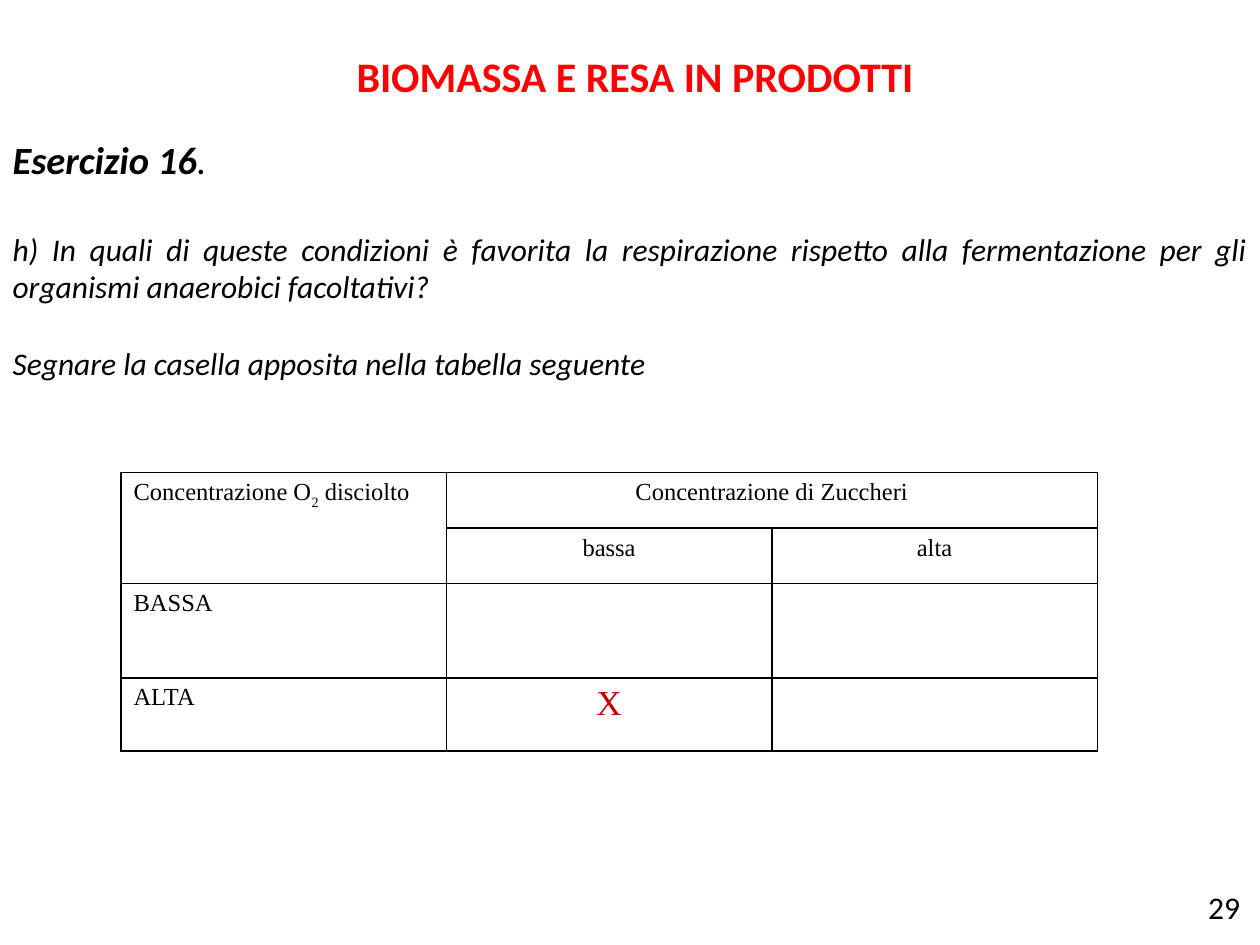
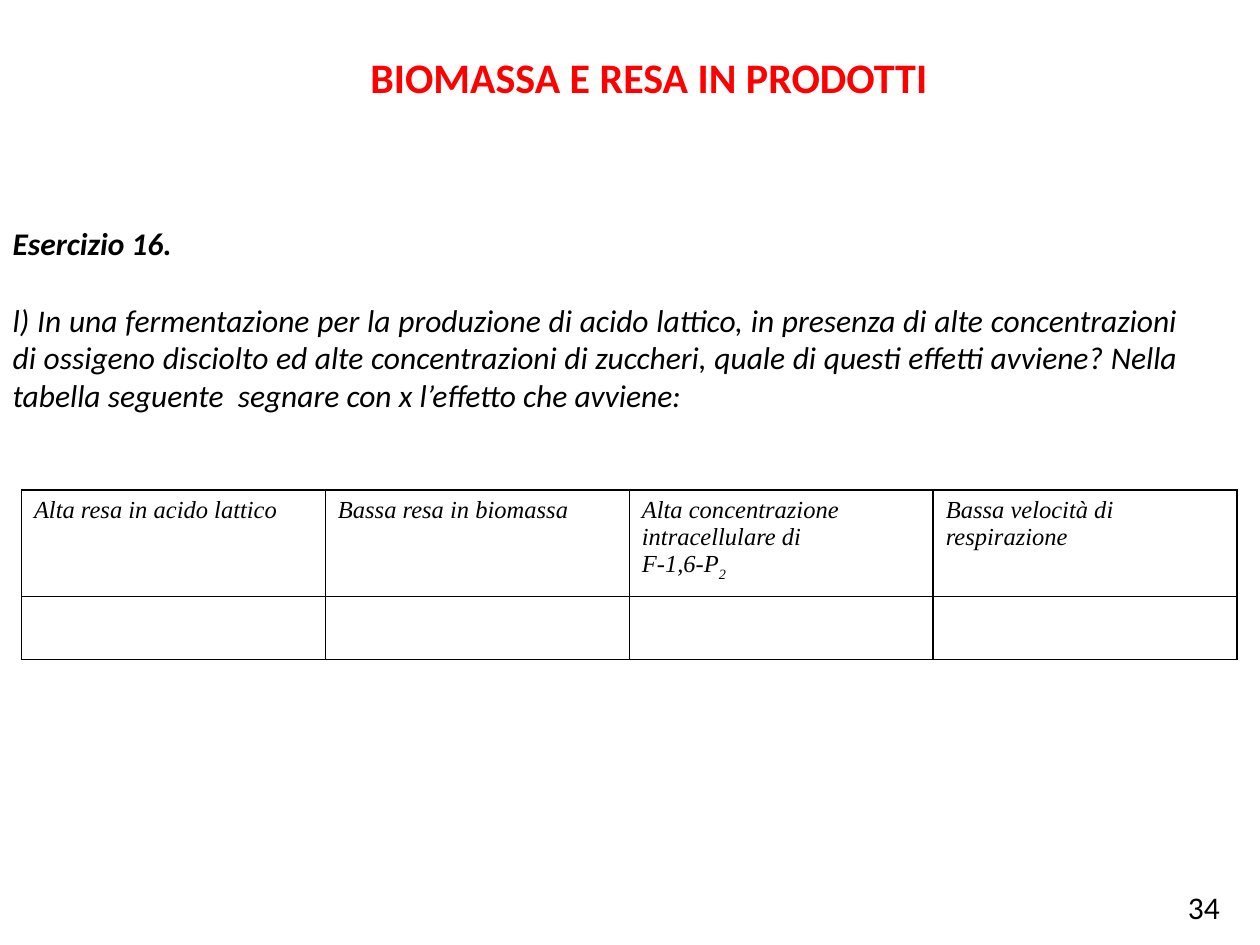
"""Build two exercise slides on biomass and product yield."""
import pptx
import pptx.dml.color
import pptx.enum.text
import pptx.oxml
import pptx.oxml.ns
import pptx.util

Inches = pptx.util.Inches
ALIGN = pptx.enum.text.PP_ALIGN
ANCHOR = pptx.enum.text.MSO_ANCHOR
FIT = pptx.enum.text.MSO_AUTO_SIZE

HEAD = "BIOMASSA E RESA IN PRODOTTI"
SANS = "Calibri"
SERIF = "Times New Roman"
BLACK, RED, DARK = "000000", "FF0000", "C00000"


def tint(code):
    return pptx.dml.color.RGBColor.from_string(code)


def place(shape, left, top, width, height):
    shape.left, shape.top = Inches(left), Inches(top)
    shape.width, shape.height = Inches(width), Inches(height)


class Deck:
    def __init__(self):
        self.show = pptx.Presentation()
        self.show.slide_width = Inches(10)
        self.show.slide_height = Inches(7.5)
        self.slide = None

    def start(self, number, left, head_at):
        self.slide = self.show.slides.add_slide(self.show.slide_layouts[1])
        title = self.slide.shapes.title
        place(title, *head_at, 8.9, 0.5)
        title.text_frame.auto_size = FIT.NONE
        self.label(title.text_frame.paragraphs[0], [HEAD], 24, RED, align=ALIGN.CENTER, bold=True)
        box = self.slide.shapes.add_textbox(Inches(left), Inches(7), Inches(0.53), Inches(0.5))
        self.label(box.text_frame.paragraphs[0], [number], 18)

    def label(self, para, parts, size, color=BLACK, face=SANS, align=ALIGN.LEFT,
              bold=False, italic=False, gap=0):
        para.alignment = align
        para.space_before = pptx.util.Pt(gap)
        font = para.font
        font.name, font.size = face, pptx.util.Pt(size)
        font.bold, font.italic = bold, italic
        font.color.rgb = tint(color)
        for part in parts:
            run = para.add_run()
            run.text = part.lstrip("_")
            if part.startswith("_"):
                run._r.get_or_add_rPr().set("baseline", "-30000")

    def body(self, at, lines):
        shape = self.slide.placeholders[1]
        place(shape, *at)
        frame = shape.text_frame
        frame.auto_size = FIT.NONE
        frame.vertical_anchor = ANCHOR.TOP
        for i, (text, size, bold, gap) in enumerate(lines):
            para = frame.add_paragraph() if i else frame.paragraphs[0]
            self.label(para, [text], size, align=ALIGN.JUSTIFY, bold=bold, italic=True, gap=gap)
            props = para._p.get_or_add_pPr()
            props.set("marL", "0")
            props.set("indent", "0")
            props.insert_element_before(pptx.oxml.parse_xml(
                f"<a:buNone {pptx.oxml.ns.nsdecls('a')}/>"), "a:tabLst", "a:defRPr", "a:extLst")
        return frame

    def table(self, left, top, width, cols, rows):
        frame = self.slide.shapes.add_table(len(rows), cols, Inches(left), Inches(top),
                                            Inches(width), Inches(sum(rows)))
        grid = frame.table
        grid.first_row = grid.horz_banding = False
        for col in grid.columns:
            col.width = Inches(width / cols)
        for row, height in zip(grid.rows, rows):
            row.height = Inches(height)
        for cell in grid.iter_cells():
            cell.fill.background()
            self.edge(cell)
        return grid

    def edge(self, cell):
        props = cell._tc.get_or_add_tcPr()
        for i, side in enumerate("LRTB"):
            props.insert(i, pptx.oxml.parse_xml(
                f'<a:ln{side} {pptx.oxml.ns.nsdecls("a")} w="12700"><a:solidFill>'
                f'<a:srgbClr val="{BLACK}"/></a:solidFill></a:ln{side}>'))

    def cell(self, cell, *lines, size=14, color=BLACK, align=ALIGN.LEFT, italic=False):
        frame = cell.text_frame
        for i, parts in enumerate(lines):
            para = frame.add_paragraph() if i else frame.paragraphs[0]
            self.label(para, parts, size, color, SERIF, align, italic=italic)


def oxygen(deck):
    deck.start("29", 9.49, (0.59, 0.35))
    frame = deck.body((0, 1.03, 10, 2.42), [
        ("Esercizio 16", 22, True, 0),
        ("h) In quali di queste condizioni è favorita la respirazione rispetto alla "
         "fermentazione per gli organismi anaerobici facoltativi?", 18, False, 27),
        ("Segnare la casella apposita nella tabella seguente", 18, False, 22)])
    stop = frame.paragraphs[0].add_run()
    stop.text = "."
    stop.font.bold = False
    grid = deck.table(0.96, 3.75, 7.75, 3, [0.44, 0.44, 0.75, 0.58])
    grid.cell(0, 0).merge(grid.cell(1, 0))
    grid.cell(0, 1).merge(grid.cell(0, 2))
    deck.cell(grid.cell(0, 0), ["Concentrazione O", "_2", " disciolto"])
    for row, level in ((2, "BASSA"), (3, "ALTA")):
        deck.cell(grid.cell(row, 0), [level])
    for row, col, text in ((0, 1, "Concentrazione di Zuccheri"), (1, 1, "bassa"), (1, 2, "alta")):
        deck.cell(grid.cell(row, col), [text], align=ALIGN.CENTER)
    deck.cell(grid.cell(3, 1), ["X"], size=20, color=DARK, align=ALIGN.CENTER)


def lactic(deck):
    deck.start("34", 9.33, (0.7, 0.36))
    deck.body((0, 1.73, 9.45, 4.04), [
        ("Esercizio 16.", 18, True, 0),
        ("l) In una fermentazione per la produzione di acido lattico, in presenza di alte "
         "concentrazioni di ossigeno disciolto ed alte concentrazioni di zuccheri, quale di "
         "questi effetti avviene? Nella tabella seguente  segnare con x l’effetto che avviene:",
         18, False, 22)])
    grid = deck.table(0.17, 3.89, 9.65, 4, [0.84, 0.5])
    effects = [
        [["Alta resa in acido lattico"]],
        [["Bassa resa in biomassa"]],
        [["Alta concentrazione intracellulare di"], ["F-1,6-P", "_2"]],
        [["Bassa velocità di respirazione"]]]
    for col, lines in enumerate(effects):
        deck.cell(grid.cell(0, col), *lines, italic=True)


def main():
    deck = Deck()
    oxygen(deck)
    lactic(deck)
    deck.show.save("out.pptx")


if __name__ == "__main__":
    main()
